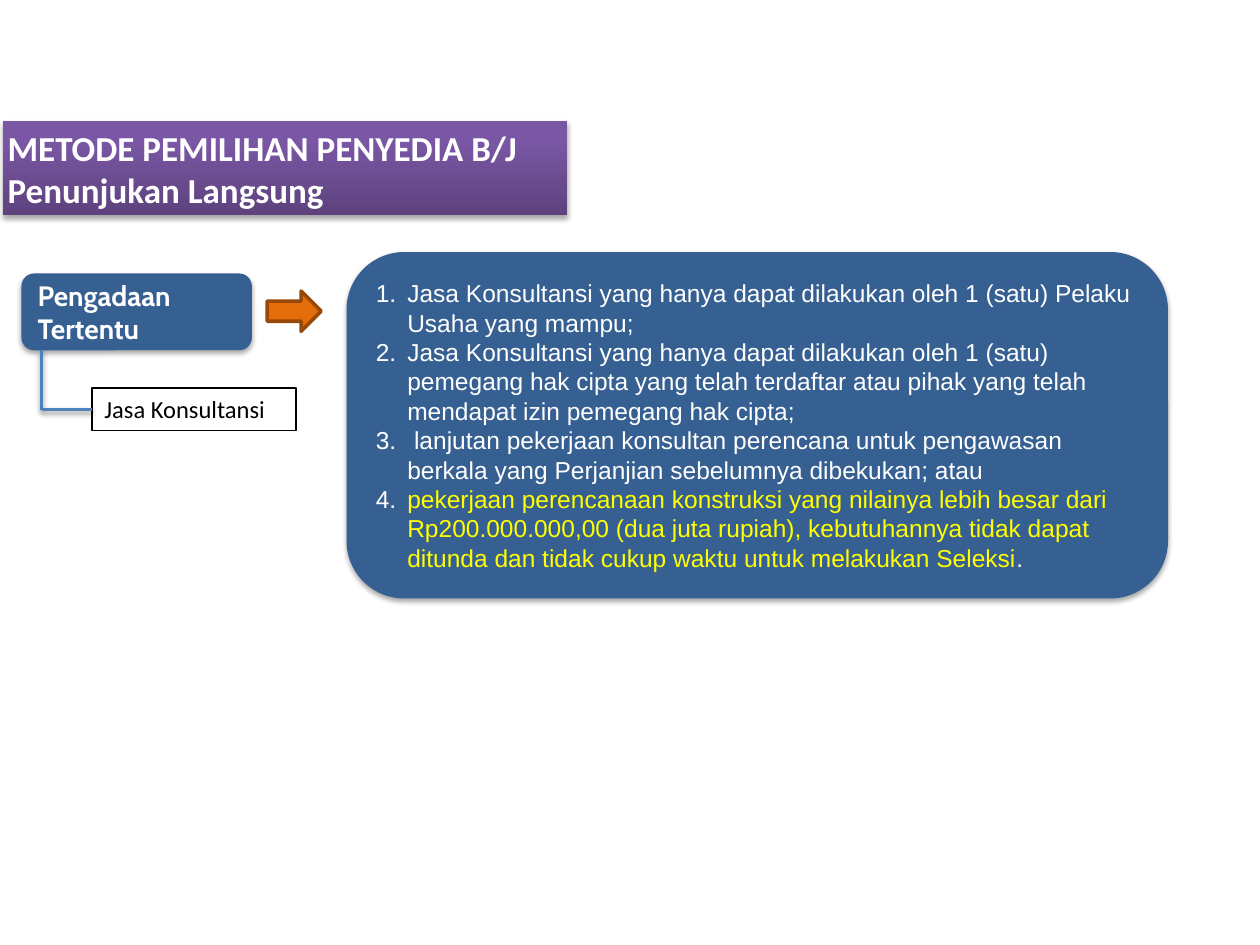
from copy import deepcopy

from lxml import etree
from pptx import Presentation
from pptx import util as u
from pptx.dml.color import RGBColor
from pptx.enum import shapes, text
from pptx.oxml import parse_xml
from pptx.oxml.ns import nsdecls, qn

COLORS = {
    "white": "FFFFFF", "black": "000000", "yellow": "FFFF00",
    "panel": "376092", "link": "4F81BD",
    "arrow": "E46C0A", "arrow_edge": "984807",
    "dark": "5D427D", "mid": "7A57A5", "light": "7A56A7",
}
RGB = {name: RGBColor.from_string(value) for name, value in COLORS.items()}


def add_text(tf, paragraphs, size=14, font="Calibri", color="white", bold=False,
             wrap=True, anchor=text.MSO_ANCHOR.MIDDLE, numbered=False):
    """Each paragraph is a list of (text, color) runs or a plain string."""
    tf.word_wrap = wrap
    tf.vertical_anchor = anchor
    for i, runs in enumerate(paragraphs):
        p = tf.paragraphs[0] if i == 0 else tf.add_paragraph()
        p.alignment = text.PP_ALIGN.LEFT
        if numbered:
            pPr = p._p.get_or_add_pPr()
            pPr.set("marL", str(u.Inches(0.25)))
            pPr.set("indent", str(-u.Inches(0.25)))
            clr = etree.SubElement(pPr, qn("a:buClr"))
            etree.SubElement(clr, qn("a:srgbClr"), val=COLORS[color])
            etree.SubElement(pPr, qn("a:buFont"), typeface="+mj-lt")
            etree.SubElement(pPr, qn("a:buAutoNum"), type="arabicPeriod")
        for words, tint in [(runs, color)] if isinstance(runs, str) else runs:
            r = p.add_run()
            r.text = words
            r.font.size, r.font.name, r.font.bold = u.Pt(size), font, bold
            r.font.color.rgb = RGB[tint]


def add_shadow(s, distance, alpha):
    """Soft shadow straight below a shape or connector."""
    spPr = s._element.spPr
    for old in spPr.findall(qn("a:effectLst")):
        spPr.remove(old)
    spPr.append(parse_xml(
        f'<a:effectLst {nsdecls("a")}><a:outerShdw blurRad="{u.Pt(3.1)}" '
        f'dist="{u.Pt(distance)}" dir="5400000" rotWithShape="0">'
        f'<a:srgbClr val="{COLORS["black"]}"><a:alpha val="{alpha * 1000}"/>'
        '</a:srgbClr></a:outerShdw></a:effectLst>'))


prs = Presentation()
prs.slide_width, prs.slide_height = u.Inches(10), u.Inches(7.5)
s = prs.slides.add_slide(prs.slide_layouts[6])
COL = prs.slide_width / 100  # grid of 100 columns by 75 rows
ROW = prs.slide_height / 75

# Shapes: kind, column, row, columns wide, rows high, fill
KIND = shapes.MSO_SHAPE
layout = {
    "category": (KIND.ROUNDED_RECTANGLE, 1.7, 21.7, 18.3, 6.1, "panel"),
    "arrow": (KIND.RIGHT_ARROW, 21.2, 23.1, 4.3, 3.2, "arrow"),
    "criteria": (KIND.ROUNDED_RECTANGLE, 27.5, 20, 65.2, 27.5, "panel"),
    "title": (KIND.RECTANGLE, 0.2, 9.6, 44.8, 7.5, None),
    "service": (KIND.RECTANGLE, 7.3, 30.8, 16.2, 3.4, None),
}
box = {}
for name, (kind, x, y, w, h, fill) in layout.items():
    sp = s.shapes.add_shape(kind, int(x * COL), int(y * ROW), int(w * COL), int(h * ROW))
    sp.shadow.inherit = False
    sp.line.fill.background()
    if fill:
        sp.fill.solid()
        sp.fill.fore_color.rgb = RGB[fill]
    else:
        sp.fill.background()
    box[name] = sp

# Outlines
for name, color, width in (("arrow", "arrow_edge", 2), ("service", "black", 0.75)):
    box[name].line.color.rgb = RGB[color]
    box[name].line.width = u.Pt(width)

# Title gradient, dark at the bottom
fill = box["title"].fill
fill.gradient()
fill.gradient_angle = 90
stops = box["title"]._element.spPr.find(".//" + qn("a:gsLst"))
stops.append(deepcopy(stops[-1]))
for stop, color, position in zip(fill.gradient_stops, ("dark", "mid", "light"), (0, 0.8, 1)):
    stop.color.rgb = RGB[color]
    stop.position = position

for name in ("category", "criteria", "title"):
    add_shadow(box[name], 1.8, 35)

# Wording
tf = box["title"].text_frame
tf.margin_left = tf.margin_right = u.Inches(0.04)
add_text(tf, ["METODE PEMILIHAN PENYEDIA B/J", "Penunjukan Langsung"], size=20, bold=True)
add_text(box["category"].text_frame, ["Pengadaan", "Tertentu"],
         size=16, font="Cabin", bold=True, wrap=False)
add_text(box["service"].text_frame, ["Jasa Konsultansi"],
         color="black", anchor=text.MSO_ANCHOR.TOP)
box["service"].text_frame.auto_size = text.MSO_AUTO_SIZE.SHAPE_TO_FIT_TEXT
add_text(box["criteria"].text_frame, [
    "Jasa Konsultansi yang hanya dapat dilakukan oleh 1 (satu) Pelaku Usaha yang mampu;",
    "Jasa Konsultansi yang hanya dapat dilakukan oleh 1 (satu) pemegang hak cipta "
    "yang telah terdaftar atau pihak yang telah mendapat izin pemegang hak cipta;",
    " lanjutan pekerjaan konsultan perencana untuk pengawasan berkala yang "
    "Perjanjian sebelumnya dibekukan; atau",
    [("pekerjaan perencanaan konstruksi yang nilainya lebih besar dari "
      "Rp200.000.000,00 (dua juta rupiah), kebutuhannya tidak dapat ditunda dan "
      "tidak cukup waktu untuk melakukan Seleksi", "yellow"), (".", "white")],
], font="Arial", numbered=True)

# Elbow from the category down to the service
for x1, y1, x2, y2 in ((3.3, 27.8, 3.3, 32.5), (3.3, 32.5, 7.3, 32.5)):
    link = s.shapes.add_connector(shapes.MSO_CONNECTOR.STRAIGHT, int(x1 * COL),
                                  int(y1 * ROW), int(x2 * COL), int(y2 * ROW))
    link.line.color.rgb = RGB["link"]
    link.line.width = u.Pt(2)
    add_shadow(link, 1.6, 38)
link.end_connect(box["service"], 1)

prs.save("out.pptx")
